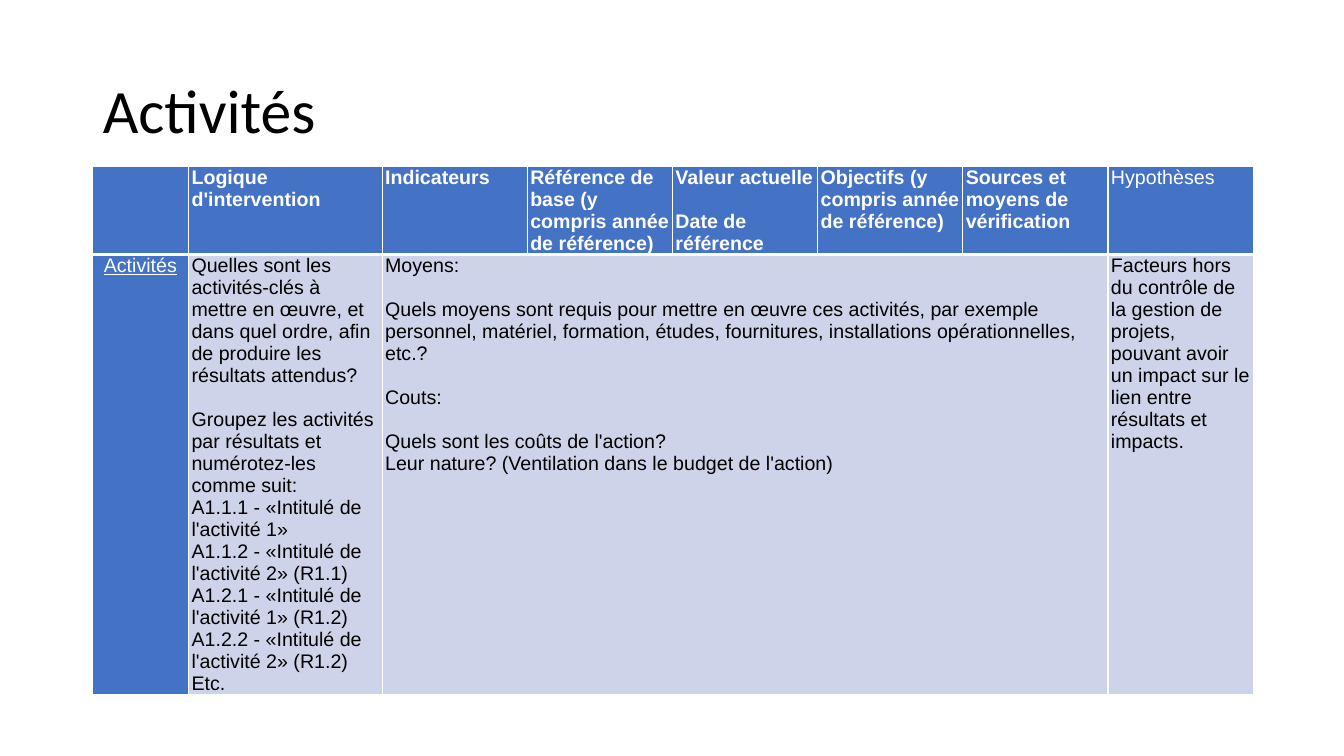
from dataclasses import dataclass

from lxml.etree import SubElement
from pptx import Presentation
from pptx.dml.color import RGBColor
from pptx.enum.text import MSO_ANCHOR, PP_ALIGN
from pptx.oxml.ns import qn
from pptx.table import _Cell
from pptx.text.text import TextFrame
from pptx.util import Inches, Length, Pt

WHITE = RGBColor(0xFF, 0xFF, 0xFF)
BLACK = RGBColor(0x00, 0x00, 0x00)
BLUE = RGBColor(0x44, 0x72, 0xC4)
PALE_BLUE = RGBColor(0xCD, 0xD4, 0xEA)

COLUMN_WIDTHS = [0.95, 1.92] + [1.44] * 6
ROW_HEIGHTS = [0.61, 3.98]
BLANK_LINE = Pt(15.7)


@dataclass(frozen=True)
class CellText:
    """Cell content; each group of lines is set apart by one line of space."""
    column: int
    groups: tuple[tuple[str, ...], ...]
    color: RGBColor = WHITE
    fill: RGBColor = BLUE
    bold: bool = False
    underline: bool = False
    indent: Length = Inches(0)
    span: int = 1


HEADER = [
    CellText(1, (("Logique d'intervention",),), bold=True),
    CellText(2, (("Indicateurs",),), bold=True),
    CellText(3, (("Référence de base (y compris année de référence)",),), bold=True),
    CellText(4, (("Valeur actuelle",), ("Date de référence",)), bold=True),
    CellText(5, (("Objectifs (y compris année de référence)",),), bold=True),
    CellText(6, (("Sources et moyens de vérification",),), bold=True),
    CellText(7, (("Hypothèses",),)),
]
BODY = [
    CellText(0, (("Activités",),), underline=True, indent=Inches(0.08)),
    CellText(1, (
        ("Quelles sont les activités-clés à mettre en œuvre, et dans quel ordre, "
         "afin de produire les résultats attendus?",),
        ("Groupez les activités par résultats et numérotez-les comme suit:",
         "A1.1.1 - «Intitulé de l'activité 1»",
         "A1.1.2 - «Intitulé de l'activité 2» (R1.1)",
         "A1.2.1 - «Intitulé de l'activité 1» (R1.2)",
         "A1.2.2 - «Intitulé de l'activité 2» (R1.2)",
         "Etc."),
    ), BLACK, PALE_BLUE),
    CellText(2, (
        ("Moyens:",),
        ("Quels moyens sont requis pour mettre en œuvre ces activités, par exemple "
         "personnel, matériel, formation, études, fournitures, installations "
         "opérationnelles, etc.?",),
        ("Couts:",),
        ("Quels sont les coûts de l'action?",
         "Leur nature? (Ventilation dans le budget de l'action)"),
    ), BLACK, PALE_BLUE, span=5),
    CellText(7, (("Facteurs hors du contrôle de la gestion de projets, pouvant avoir "
                  "un impact sur le lien entre résultats et impacts.",),),
             BLACK, PALE_BLUE),
]


def write_text(tf: TextFrame, groups: tuple[tuple[str, ...], ...], *, font: str,
               size: float, color: RGBColor, bold: bool = False,
               underline: bool = False, indent: Length = Inches(0),
               line_spacing: float = 1.0) -> None:
    lines = [(line, number > 0 and position == 0)
             for number, group in enumerate(groups)
             for position, line in enumerate(group)]
    for index, (line, starts_group) in enumerate(lines):
        p = tf.add_paragraph() if index else tf.paragraphs[0]
        p.alignment = PP_ALIGN.LEFT
        p.line_spacing = line_spacing
        if starts_group:
            p.space_before = BLANK_LINE
        if indent:
            p._p.get_or_add_pPr().set("marL", str(indent))
        r = p.add_run()
        r.text = line
        r.font.name = font
        r.font.size = Pt(size)
        r.font.bold = bold
        r.font.underline = underline
        r.font.color.rgb = color


def format_cell(cell: _Cell, fill: RGBColor, top: float, bottom: float) -> None:
    """Set the fill, margins and white borders; top and bottom are in points."""
    cell.margin_left = cell.margin_right = Inches(0.03)
    cell.margin_top = cell.margin_bottom = 0
    tcPr = cell._tc.get_or_add_tcPr()
    for side, width in (("L", 1), ("R", 1), ("T", top), ("B", bottom)):
        ln = SubElement(tcPr, qn(f"a:ln{side}"), w=str(Pt(width)))
        solid = SubElement(ln, qn("a:solidFill"))
        SubElement(solid, qn("a:srgbClr"), val=str(WHITE))
    cell.fill.solid()
    cell.fill.fore_color.rgb = fill


def main() -> None:
    prs = Presentation()
    prs.slide_width, prs.slide_height = Inches(13.33), Inches(7.5)
    s = prs.slides.add_slide(prs.slide_layouts[5])

    title = s.shapes.title
    title.left, title.top = Inches(0.92), Inches(0.4)
    title.width, title.height = Inches(11.5), Inches(1.45)
    title.text_frame.vertical_anchor = MSO_ANCHOR.MIDDLE
    write_text(title.text_frame, (("Activités",),), font="Calibri", size=44,
               color=BLACK, line_spacing=0.9)

    table = s.shapes.add_table(
        len(ROW_HEIGHTS), len(COLUMN_WIDTHS), Inches(0.92), Inches(1.65),
        Inches(sum(COLUMN_WIDTHS)), Inches(sum(ROW_HEIGHTS))).table
    table.first_row = table.horz_banding = False
    for column, width in zip(table.columns, COLUMN_WIDTHS):
        column.width = Inches(width)
    for row, height in zip(table.rows, ROW_HEIGHTS):
        row.height = Inches(height)

    for row, items in enumerate((HEADER, BODY)):
        fills = {item.column + i: item.fill for item in items for i in range(item.span)}
        for column in range(len(COLUMN_WIDTHS)):
            format_cell(table.cell(row, column), fills.get(column, BLUE),
                        top=3 if row else 1, bottom=1 if row else 3)
        for item in items:
            cell = table.cell(row, item.column)
            if item.span > 1:
                cell.merge(table.cell(row, item.column + item.span - 1))
            write_text(cell.text_frame, item.groups, font="Arial", size=14,
                       color=item.color, bold=item.bold,
                       underline=item.underline, indent=item.indent)

    prs.save("out.pptx")


if __name__ == "__main__":
    main()
